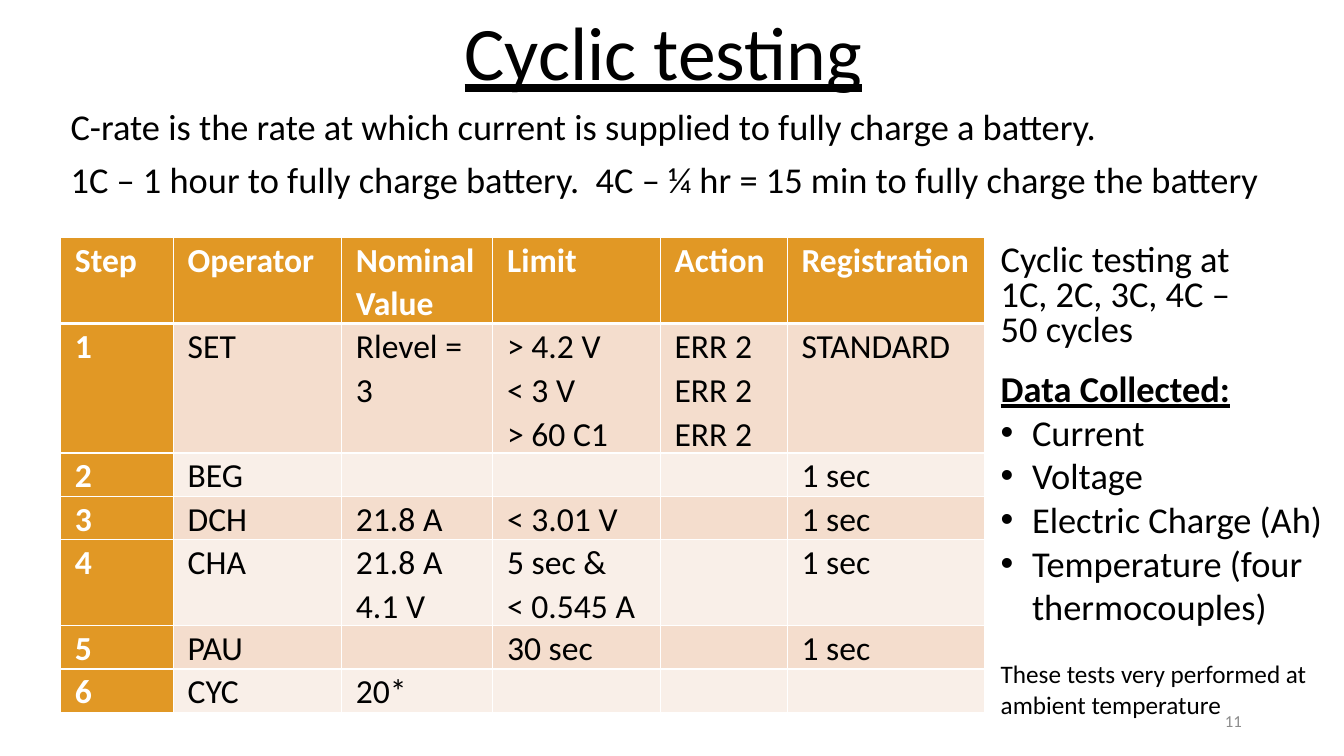
from lxml import etree
from pptx import Presentation
from pptx.dml.color import RGBColor
from pptx.enum.text import MSO_ANCHOR, PP_ALIGN
from pptx.oxml.ns import qn
from pptx.util import Cm, Pt

LEFT, CENTER, RIGHT = PP_ALIGN.LEFT, PP_ALIGN.CENTER, PP_ALIGN.RIGHT
TOP, MIDDLE = MSO_ANCHOR.TOP, MSO_ANCHOR.MIDDLE

BLACK = RGBColor(0x00, 0x00, 0x00)
WHITE = RGBColor(0xFF, 0xFF, 0xFF)
GRAY = RGBColor(0x8C, 0x8C, 0x8C)
ORANGE = RGBColor(0xE1, 0x98, 0x25)
BANDS = [RGBColor(0xF4, 0xDD, 0xCD), RGBColor(0xF9, 0xEF, 0xE8)]

STEPS = [
    ["Step", "Operator", "Nominal Value", "Limit", "Action", "Registration"],
    ["1", "SET", "Rlevel = 3", "> 4.2 V\n< 3 V\n> 60 C1",
     "ERR 2\nERR 2\nERR 2", "STANDARD"],
    ["2", "BEG", "", "", "", "1 sec"],
    ["3", "DCH", "21.8 A", "< 3.01 V", "", "1 sec"],
    ["4", "CHA", "21.8 A\n4.1 V", "5 sec &\n< 0.545 A", "", "1 sec"],
    ["5", "PAU", "", "30 sec", "", "1 sec"],
    ["6", "CYC", "20*", "", "", ""],
]
COL_WIDTHS = [2.84, 4.24, 3.81, 4.22, 3.2, 4.98]
ROW_HEIGHTS = [1.93, 2.84, 1.04, 1.04, 1.93, 1.04, 1.04]


class SlideBuilder:
    """Holds the text style and the current slide."""

    def __init__(self, prs, font="Calibri"):
        self.s = prs.slides.add_slide(prs.slide_layouts[6])
        self.font = font

    def box(self, x, y, w, h, wrap=True, anchor=TOP):
        tf = self.s.shapes.add_textbox(Cm(x), Cm(y), Cm(w), Cm(h)).text_frame
        tf.word_wrap = wrap
        tf.vertical_anchor = anchor
        return tf

    def para(self, tf, text, size=26, color=BLACK, bold=False, underline=False,
             align=LEFT, spacing=1.0, before=0, bullet=False):
        p = tf.paragraphs[0]
        if p.runs:
            p = tf.add_paragraph()
        p.alignment = align
        p.line_spacing = spacing
        p.space_before = Pt(before)
        if bullet:
            self.bullet(p)
        r = p.add_run()
        r.text = text
        r.font.name = self.font
        r.font.size = Pt(size)
        r.font.bold = bold
        r.font.underline = underline
        r.font.color.rgb = color

    def bullet(self, p):
        pPr = p._p.get_or_add_pPr()
        pPr.set("marL", str(Cm(0.79)))
        pPr.set("indent", str(-Cm(0.79)))
        etree.SubElement(pPr, qn("a:buFont")).set("typeface", "Arial")
        etree.SubElement(pPr, qn("a:buChar")).set("char", "•")

    def border(self, cell, side, width):
        ln = etree.SubElement(cell._tc.get_or_add_tcPr(), qn("a:ln" + side))
        ln.set("w", str(Pt(width)))
        fill = etree.SubElement(ln, qn("a:solidFill"))
        etree.SubElement(fill, qn("a:srgbClr")).set("val", str(WHITE))

    def cell(self, cell, text, row, col):
        header = row == 0
        key = header or col == 0
        cell.margin_left = cell.margin_right = Cm(0.36)
        cell.margin_top = cell.margin_bottom = 0
        widths = {"L": 1, "R": 1, "T": 3 if row == 1 else 1, "B": 3 if header else 1}
        for side, width in widths.items():
            self.border(cell, side, width)
        cell.fill.solid()
        cell.fill.fore_color.rgb = ORANGE if key else BANDS[(row - 1) % 2]
        if text:
            for line in text.split("\n"):
                self.para(cell.text_frame, line, 24, WHITE if key else BLACK,
                          bold=key, spacing=1.07)

    def table(self, x, y, rows, widths, heights):
        table = self.s.shapes.add_table(
            len(rows), len(widths), Cm(x), Cm(y),
            Cm(sum(widths)), Cm(sum(heights))).table
        for column, width in zip(table.columns, widths):
            column.width = Cm(width)
        for i, (values, height) in enumerate(zip(rows, heights)):
            table.rows[i].height = Cm(height)
            for j, text in enumerate(values):
                self.cell(table.cell(i, j), text, i, j)


def main():
    prs = Presentation()
    prs.slide_width, prs.slide_height = Cm(33.87), Cm(19.05)
    b = SlideBuilder(prs)

    # Title
    tf = b.box(11.4, 0, 10.64, 2.57, wrap=False)
    b.para(tf, "Cyclic testing", 54, underline=True, align=CENTER)

    # Test program
    b.table(1.53, 5.98, STEPS, COL_WIDTHS, ROW_HEIGHTS)

    # Test conditions
    tf = b.box(24.97, 6.05, 7.04, 3.05)
    b.para(tf, "Cyclic testing at 1C, 2C, 3C, 4C – 50 cycles", spacing=0.8)

    # Collected data
    tf = b.box(24.97, 9.1, 9.2, 9.24)
    b.para(tf, "Data Collected:", bold=True, underline=True)
    for item in ("Current", "Voltage", "Electric Charge (Ah)",
                 "Temperature (four thermocouples)"):
        b.para(tf, item, bullet=True)
    b.para(tf, "These tests very performed at ambient temperature", 18, before=22)

    # Page number
    tf = b.box(23.93, 17.66, 7.62, 1.01, anchor=MIDDLE)
    b.para(tf, "11", 12, GRAY, align=RIGHT)

    # C-rate definition
    tf = b.box(1.53, 2.62, 30.94, 3.05)
    b.para(tf, "C-rate is the rate at which current is supplied to fully charge "
               "a battery.", spacing=0.9)
    b.para(tf, "1C – 1 hour to fully charge battery.  4C – ¼ hr = 15 min to fully "
               "charge the battery", spacing=0.9, before=10)

    prs.save("out.pptx")


if __name__ == "__main__":
    main()
